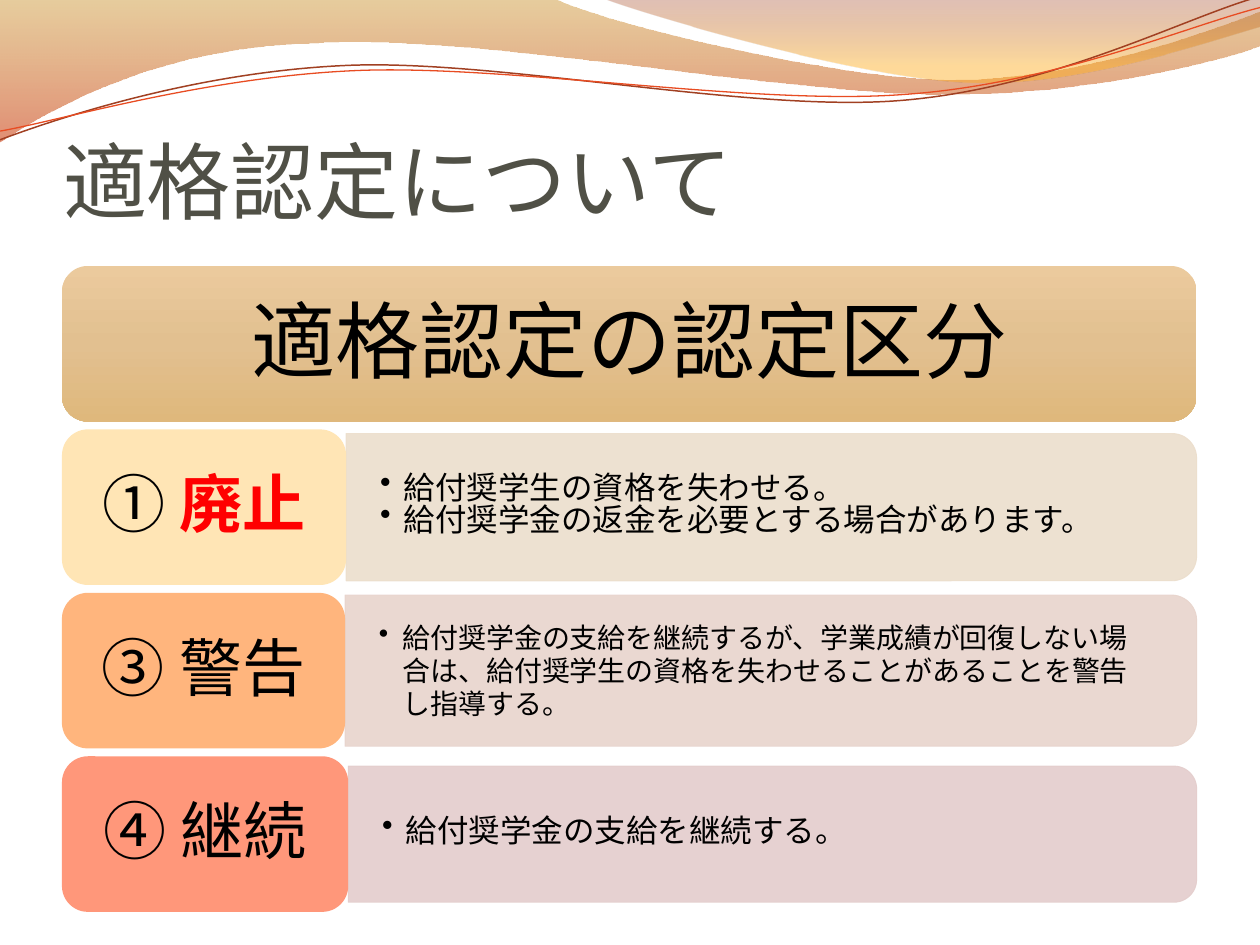
from lxml.etree import SubElement
from pptx import Presentation
from pptx.dml.color import RGBColor
from pptx.enum.shapes import MSO_SHAPE as Shape
from pptx.enum.text import MSO_ANCHOR as Anchor, PP_ALIGN as Align
from pptx.oxml.ns import qn
from pptx.util import Pt

FONT = "Noto Sans CJK JP"
COLORS = {
    "text": "000000", "title": "505046", "alert": "FF0000",
    "wave_top": "CA9027", "wave_bottom": "C83100",
    "crest_top": "972E0C", "crest_bottom": "FFAF21",
    "dark_line": "A14022", "bright_line": "E84C22",
    "header_top": "EBCA9D", "header_middle": "E2C090", "header_bottom": "DFB87C",
    "abolish": "FFE5B5", "abolish_panel": "ECDECC",
    "warn": "FFB57D", "warn_panel": "E8D4CC",
    "continue": "FF977A", "continue_panel": "E4CDCC",
}
WAVE = [(0, 0), (316.8, -0.7), (342, 12.2, 477.4, 45.4, 545.8, 45.4),
        (614.2, 45.4, 689.8, 18.7, 720, 6.5), (720.7, 25.9),
        (707.8, 31.7, 625.7, 54.7, 537.1, 54),
        (447.8, 54, 274.3, 20.2, 185, 24.5), (92.9, 25.9, 33.1, 59.8, -0.7, 81.4)]
CREST = [(344.9, -0.7), (366.5, 7.9, 491, 44.6, 553, 46.8),
         (615.6, 49.7, 691.9, 23, 720, 15.1), (720, 0)]
DARK_LINE = [(0, 79.9), (34.6, 67, 113, 41, 198.7, 37.4),
             (284.4, 33.8, 426.2, 64.1, 512.6, 57.6),
             (599.8, 51.1, 675.4, 10.8, 717.8, -1.4)]
BRIGHT_LINE = [(0, 74.9), (33.8, 69.1, 117.4, 43.9, 203.8, 40.3),
               (289.4, 36.7, 429.8, 60.5, 516.2, 54),
               (601.9, 48.2, 677.5, 15.1, 720, 4.3)]
LEFT, RIGHT, TOP = 35.4, 683.8, 152
ROW_HEIGHT, ROW_PITCH = 88.9, 93.4
ROWS = [
    ("abolish", [("① ", None), ("廃止", "alert")], 162.4, 84.2, 18, 0.73,
     ["給付奨学生の資格を失わせる。", "給付奨学金の返金を必要とする場合があります。"]),
    ("warn", [("③ 警告", None)], 161.8, 86.4, 16, Pt(19),
     ["給付奨学金の支給を継続するが、学業成績が回復しない場合は、"
      "給付奨学生の資格を失わせることがあることを警告し指導する。"]),
    ("continue", [("④ 継続", None)], 163.6, 77.8, 18, 0.73,
     ["給付奨学金の支給を継続する。"]),
]


def rgb(name):
    """Return the named colour."""
    return RGBColor.from_string(COLORS[name])


def fill_gradient(shape, stops):
    """Fill a shape downwards with (position, colour, opacity) stops."""
    shape.fill.gradient()
    shape.fill.gradient_angle = 270
    stop_list = shape._element.spPr.find(qn("a:gradFill")).find(qn("a:gsLst"))
    for old_stop in list(stop_list):
        stop_list.remove(old_stop)
    for position, color, opacity in stops:
        stop = SubElement(stop_list, qn("a:gs"), pos=str(position * 1000))
        value = SubElement(stop, qn("a:srgbClr"), val=COLORS[color])
        if opacity < 100:
            SubElement(value, qn("a:alpha"), val=str(opacity * 1000))


def add_curve(slide, segments, closed):
    """Add an outline whose six-number segments are cubic curves."""
    points = [(Pt(segment[-2]), Pt(segment[-1])) for segment in segments]
    builder = slide.shapes.build_freeform(*points[0], scale=1.0)
    builder.add_line_segments(points[1:], close=closed)
    shape = builder.convert_to_shape()
    shape.shadow.inherit = False
    lines = list(shape._element.spPr.iter(qn("a:lnTo")))
    for line, segment in zip(lines, segments[1:]):
        if len(segment) == 6:
            line.tag = qn("a:cubicBezTo")
            line.remove(line[0])
            for x, y in zip(segment[::2], segment[1::2]):
                SubElement(line, qn("a:pt"), x=str(Pt(x) - shape.left), y=str(Pt(y) - shape.top))
    return shape


def add_band(slide, segments, stops):
    """Add a gradient band to the top decoration."""
    shape = add_curve(slide, segments, True)
    fill_gradient(shape, stops)
    shape.line.fill.background()


def add_wave_line(slide, segments, color, width):
    """Add a thin curved line to the top decoration."""
    shape = add_curve(slide, segments, False)
    shape.fill.background()
    shape.line.color.rgb = rgb(color)
    shape.line.width = Pt(width)


def set_font(paragraph, size, color="text"):
    """Format a whole paragraph, East Asian text included."""
    paragraph.font.size = Pt(size)
    paragraph.font.name = FONT
    paragraph.font.color.rgb = rgb(color)
    properties = paragraph._p.pPr.find(qn("a:defRPr"))
    SubElement(properties, qn("a:ea"), typeface=FONT)


def set_frame(frame, anchor, left=0, top=0, right=0, bottom=0):
    """Set wrapping, anchor and insets of a text frame."""
    frame.word_wrap = True
    frame.vertical_anchor = anchor
    frame.margin_left, frame.margin_right = Pt(left), Pt(right)
    frame.margin_top, frame.margin_bottom = Pt(top), Pt(bottom)


def add_title(slide, text):
    """Place and format the slide title."""
    title = slide.shapes.title
    title.left, title.top, title.width, title.height = Pt(36), Pt(42), Pt(648), Pt(90)
    set_frame(title.text_frame, Anchor.BOTTOM, top=3.6, bottom=0.8)
    title.text_frame.text = text
    paragraph = title.text_frame.paragraphs[0]
    paragraph.alignment = Align.LEFT
    paragraph.line_spacing = 0.8
    set_font(paragraph, 48, "title")


def add_card(slide, top, width, runs, size, top_inset=9):
    """Add a rounded card with centred text; coloured runs are bold."""
    card = slide.shapes.add_shape(Shape.ROUNDED_RECTANGLE, Pt(LEFT), Pt(top),
                                  Pt(width), Pt(ROW_HEIGHT))
    card.shadow.inherit = False
    card.line.fill.background()
    set_frame(card.text_frame, Anchor.MIDDLE, 15, top_inset, 15, 9)
    paragraph = card.text_frame.paragraphs[0]
    paragraph.alignment = Align.CENTER
    paragraph.line_spacing = 0.9
    set_font(paragraph, size)
    for text, color in runs:
        run = paragraph.add_run()
        run.text = text
        if color:
            run.font.bold = True
            run.font.color.rgb = rgb(color)
    return card


def add_panel(slide, left, middle, height, color):
    """Add a panel rounded on its right side."""
    width = RIGHT - left
    panel = slide.shapes.add_shape(
        Shape.ROUND_2_SAME_RECTANGLE, Pt(left + (width - height) / 2),
        Pt(middle - width / 2), Pt(height), Pt(width))
    panel.rotation = 90
    panel.shadow.inherit = False
    panel.fill.solid()
    panel.fill.fore_color.rgb = rgb(color)
    panel.line.color.rgb = rgb(color)
    panel.line.width = Pt(0.5)
    for value in panel._element.spPr.iter(qn("a:srgbClr")):
        SubElement(value, qn("a:alpha"), val="90000")


def add_bullets(slide, left, middle, height, items, size, spacing):
    """Add a bulleted list centred on a panel."""
    box = slide.shapes.add_textbox(Pt(left), Pt(middle - height / 2),
                                   Pt(RIGHT - left - 4.2), Pt(height))
    frame = box.text_frame
    set_frame(frame, Anchor.MIDDLE, 19.4, 10, 19.4, 10)
    frame.text = "\n".join(items)
    for paragraph in frame.paragraphs:
        properties = paragraph._p.get_or_add_pPr()
        properties.set("marL", str(Pt(13.5)))
        properties.set("indent", str(Pt(-13.5)))
        SubElement(properties, qn("a:buChar"), char="•")
        paragraph.level = 1
        paragraph.alignment = Align.LEFT
        paragraph.line_spacing = spacing
        paragraph.space_after = Pt(2.7)
        set_font(paragraph, size)


def main():
    """Build the slide and save it."""
    presentation = Presentation()
    presentation.slide_width, presentation.slide_height = Pt(720), Pt(540)
    slide = presentation.slides.add_slide(presentation.slide_layouts[5])
    add_band(slide, WAVE, [(0, "wave_top", 45), (100, "wave_bottom", 55)])
    add_band(slide, CREST, [(0, "crest_top", 30), (80, "crest_bottom", 45)])
    add_wave_line(slide, DARK_LINE, "dark_line", 0.85)
    add_wave_line(slide, BRIGHT_LINE, "bright_line", 0.75)
    add_title(slide, "適格認定について")
    header = add_card(slide, TOP, RIGHT - LEFT, [("適格認定の認定区分", None)], 48, 11)
    fill_gradient(header, [(0, "header_top", 100), (50, "header_middle", 100),
                           (100, "header_bottom", 100)])
    for row, (name, runs, card_width, height, size, spacing, items) in enumerate(ROWS, 1):
        top = TOP + row * ROW_PITCH
        left, middle = LEFT + card_width, top + ROW_HEIGHT / 2
        add_panel(slide, left, middle, height, name + "_panel")
        add_bullets(slide, left, middle, height - 8.4, items, size, spacing)
        card = add_card(slide, top, card_width, runs, 36)
        card.fill.solid()
        card.fill.fore_color.rgb = rgb(name)
    presentation.save("out.pptx")


if __name__ == "__main__":
    main()
